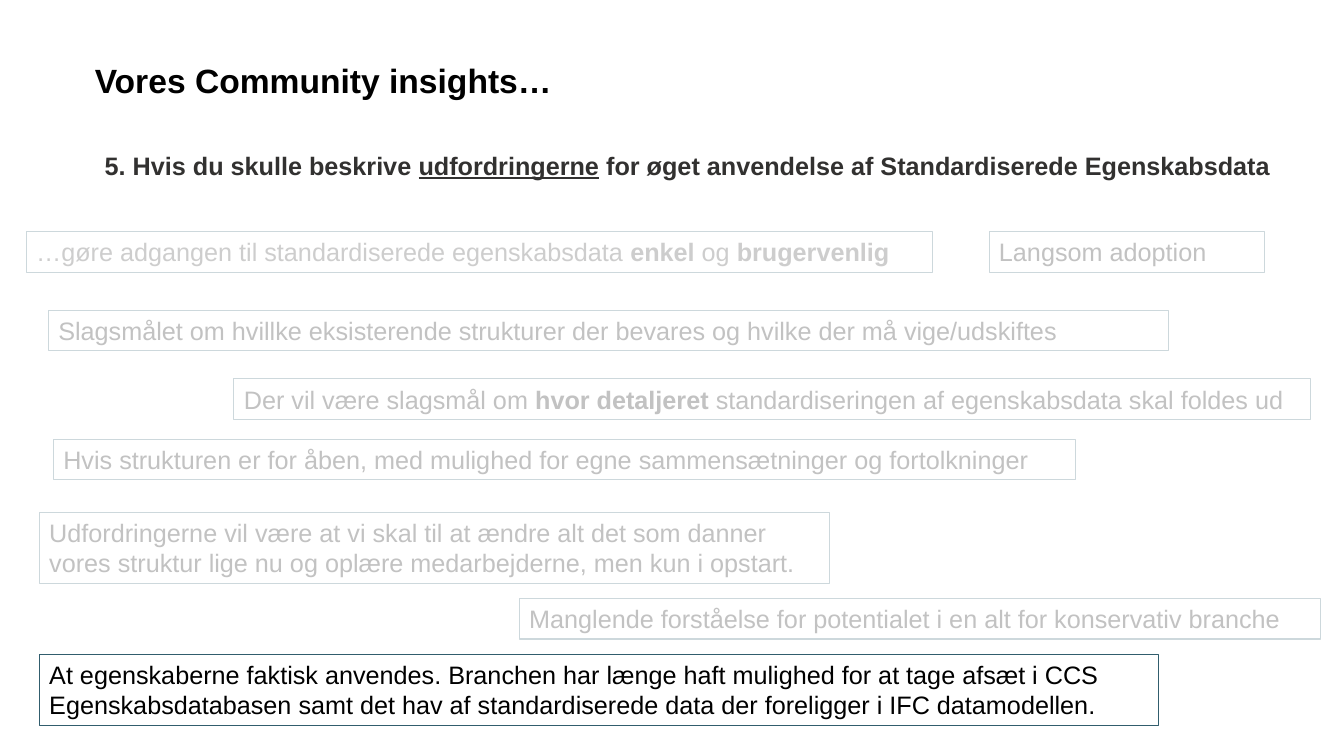
from lxml.etree import SubElement
from pptx import Presentation
from pptx.dml.color import RGBColor
from pptx.enum.shapes import MSO_SHAPE
from pptx.enum.text import MSO_ANCHOR, PP_ALIGN
from pptx.oxml.ns import qn
from pptx.util import Pt

PX = 9144  # 100 px to the inch
BLACK = RGBColor(0x00, 0x00, 0x00)
CHARCOAL = RGBColor(0x32, 0x31, 0x30)
TEAL = RGBColor(0x31, 0x5D, 0x6D)
WHITE = RGBColor(0xFF, 0xFF, 0xFF)

prs = Presentation()
prs.slide_width, prs.slide_height = 1333 * PX, 750 * PX
s = prs.slides.add_slide(prs.slide_layouts[6])


def write(sp, runs, color, emphasis, size=18, bold=False):
    """Fill a shape with runs; every second run carries the emphasis attribute."""
    tf = sp.text_frame
    tf.word_wrap = True
    tf.vertical_anchor = MSO_ANCHOR.TOP
    p = tf.paragraphs[0]
    p.alignment = PP_ALIGN.LEFT
    for i, text in enumerate(runs):
        r = p.add_run()
        r.text = text
        font = {"name": "Arial", "size": Pt(size), "bold": bold}
        if i % 2:
            font[emphasis] = True
        for name, value in font.items():
            setattr(r.font, name, value)
        r.font.color.rgb = color


def add_rect(box):
    sp = s.shapes.add_shape(MSO_SHAPE.RECTANGLE, *(v * PX for v in box))
    sp.shadow.inherit = False
    return sp


title = s.shapes.add_textbox(94 * PX, 54 * PX, 1028 * PX, 119 * PX)
title.text_frame.margin_left = title.text_frame.margin_right = 0
write(title, ["Vores Community insights…"], BLACK, "bold", size=24, bold=True)

question = s.shapes.add_textbox(94 * PX, 144 * PX, 1185 * PX, 40 * PX)
write(question, ["5. Hvis du skulle beskrive ", "udfordringerne",
                 " for øget anvendelse af Standardiserede Egenskabsdata"],
      CHARCOAL, "underline", bold=True)

# Answer box, veil box (None leaves the answer in full colour), text colour, runs
answers = [
    ((26, 230, 899, 40), (14, 223, 947, 60), CHARCOAL,
     ["…gøre adgangen til standardiserede egenskabsdata ", "enkel ", "og ", "brugervenlig"]),
    ((981, 230, 273, 40), (940, 225, 408, 60), BLACK,
     ["Langsom adoption"]),
    ((48, 308, 1111, 40), (39, 304, 1128, 50), BLACK,
     ["Slagsmålet om hvillke eksisterende strukturer der bevares og hvilke der må vige/udskiftes"]),
    ((232, 376, 1068, 40), (200, 370, 1109, 50), BLACK,
     ["Der vil være slagsmål om ", "hvor detaljeret ",
      "standardiseringen af egenskabsdata skal foldes ud"]),
    ((53, 436, 1014, 40), (39, 429, 1038, 50), BLACK,
     ["Hvis strukturen er for åben, med mulighed for egne sammensætninger og fortolkninger"]),
    ((39, 508, 784, 71), (11, 503, 842, 84), BLACK,
     ["Udfordringerne vil være at vi skal til at ændre alt det som danner "
      "vores struktur lige nu og oplære medarbejderne, men kun i opstart."]),
    ((515, 594, 795, 40), (491, 586, 842, 60), BLACK,
     ["Manglende forståelse for potentialet i en alt for konservativ branche"]),
    ((39, 649, 1110, 71), None, BLACK,
     ["At egenskaberne faktisk anvendes. Branchen har længe haft mulighed for at tage afsæt i CCS "
      "Egenskabsdatabasen samt det hav af standardiserede data der foreligger i IFC datamodellen."]),
]

for box, _, color, runs in answers:
    sp = add_rect(box)
    sp.fill.background()
    sp.line.color.rgb = TEAL
    sp.line.width = Pt(0.75)
    write(sp, runs, color, "bold")

for _, veil, _, _ in answers:
    if veil:
        sp = add_rect(veil)
        sp.line.fill.background()
        sp.fill.solid()
        sp.fill.fore_color.rgb = WHITE
        srgb = sp.fill._xPr.find(qn("a:solidFill")).find(qn("a:srgbClr"))
        SubElement(srgb, qn("a:alpha"), val="76000")

prs.save("out.pptx")
